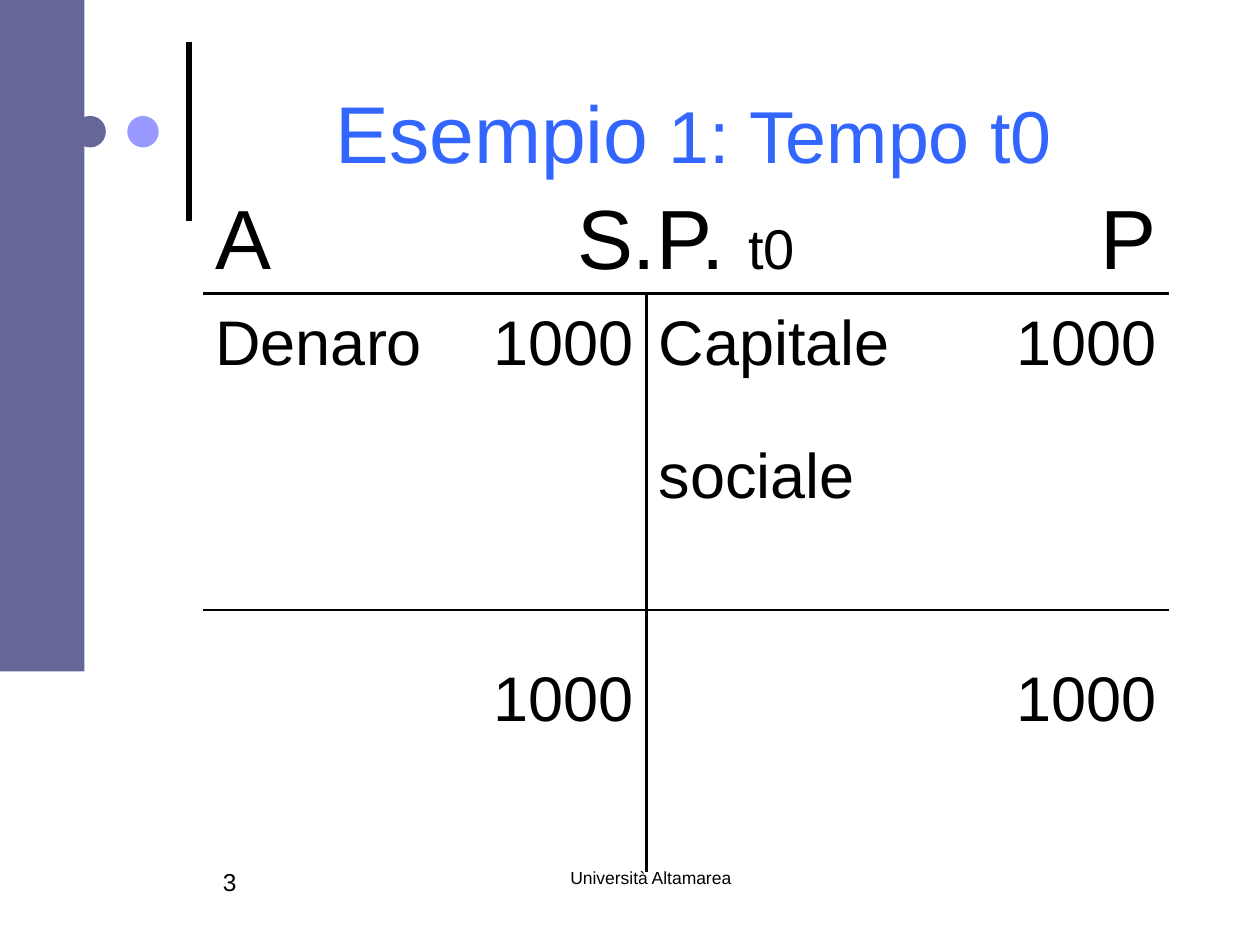
import pptx
import pptx.dml.color
import pptx.enum.shapes
import pptx.enum.text
import pptx.oxml.ns
import pptx.util
from lxml import etree

Inches = pptx.util.Inches
Pt = pptx.util.Pt
RGBColor = pptx.dml.color.RGBColor
ALIGN = pptx.enum.text.PP_ALIGN
ANCHOR = pptx.enum.text.MSO_ANCHOR
SHAPE = pptx.enum.shapes.MSO_SHAPE
qn = pptx.oxml.ns.qn

BLACK = RGBColor(0x00, 0x00, 0x00)
SLATE = RGBColor(0x66, 0x66, 0x99)
LAVENDER = RGBColor(0x99, 0x99, 0xFF)
BLUE = RGBColor(0x33, 0x66, 0xFF)
FONT = "Arial"

COLUMN_WIDTHS = [1.92, 1.6, 2.23, 1.92]
ROW_HEIGHTS = [0.94, 0.73, 1.05, 0.73, 1.04, 1.04]
HEADER_RULE_ROW = 0
TOTAL_RULE_ROW = 3
CENTRE_COLUMN = 2
ENTRIES = {
    (0, 0): ([("A", 48)], ALIGN.LEFT),
    (0, 1): ([("S.P. ", 48), ("t0", 32)], ALIGN.CENTER),
    (0, 3): ([("P", 48)], ALIGN.RIGHT),
    (1, 0): ([("Denaro", 36)], ALIGN.LEFT),
    (1, 1): ([("1000", 36)], ALIGN.RIGHT),
    (1, 2): ([("Capitale", 36)], ALIGN.LEFT),
    (1, 3): ([("1000", 36)], ALIGN.RIGHT),
    (2, 2): ([("sociale", 36)], ALIGN.LEFT),
    (4, 1): ([("1000", 36)], ALIGN.RIGHT),
    (4, 3): ([("1000", 36)], ALIGN.RIGHT),
}


def add_runs(para, runs, color, align):
    para.alignment = align
    for text, size in runs:
        run = para.add_run()
        run.text = text
        run.font.name = FONT
        run.font.size = Pt(size)
        run.font.color.rgb = color


def add_text(page, bounds, runs, color=BLACK, align=ALIGN.LEFT, anchor=ANCHOR.TOP):
    box = page.shapes.add_textbox(*map(Inches, bounds))
    box.text_frame.word_wrap = True
    box.text_frame.vertical_anchor = anchor
    add_runs(box.text_frame.paragraphs[0], runs, color, align)


def add_filled_shape(page, kind, bounds, color):
    shape = page.shapes.add_shape(kind, *map(Inches, bounds))
    shape.shadow.inherit = False
    shape.fill.solid()
    shape.fill.fore_color.rgb = color
    shape.line.fill.background()


def add_rule(page, start, end, width):
    rule = page.shapes.add_connector(
        pptx.enum.shapes.MSO_CONNECTOR.STRAIGHT, *map(Inches, start + end))
    rule.line.color.rgb = BLACK
    rule.line.width = Pt(width)
    etree.SubElement(rule._element.spPr, qn("a:effectLst"))


def set_borders(cell, widths):
    properties = cell._tc.get_or_add_tcPr()
    for position, (side, width) in enumerate(widths.items()):
        border = etree.Element(qn(f"a:ln{side}"), w=str(Pt(width)))
        if width:
            fill = etree.SubElement(border, qn("a:solidFill"))
            etree.SubElement(fill, qn("a:srgbClr"), val=str(BLACK))
        else:
            etree.SubElement(border, qn("a:noFill"))
        properties.insert(position, border)


def border_widths(row, column):
    rules = {HEADER_RULE_ROW: 2, TOTAL_RULE_ROW: 1}
    below_header = row > HEADER_RULE_ROW
    return {
        "L": 2 if below_header and column == CENTRE_COLUMN else 0,
        "R": 2 if below_header and column == CENTRE_COLUMN - 1 else 0,
        "T": rules.get(row - 1, 0),
        "B": rules.get(row, 0),
    }


def add_balance_table(page, left, top):
    table = page.shapes.add_table(
        len(ROW_HEIGHTS), len(COLUMN_WIDTHS), Inches(left), Inches(top),
        Inches(sum(COLUMN_WIDTHS)), Inches(sum(ROW_HEIGHTS))).table
    table.first_row = False
    table.horz_banding = False
    for column, width in zip(table.columns, COLUMN_WIDTHS):
        column.width = Inches(width)
    for row, height in zip(table.rows, ROW_HEIGHTS):
        row.height = Inches(height)
    table.cell(0, 1).merge(table.cell(0, 2))
    for row in range(len(ROW_HEIGHTS)):
        for column in range(len(COLUMN_WIDTHS)):
            cell = table.cell(row, column)
            cell.fill.background()
            cell.vertical_anchor = ANCHOR.BOTTOM
            set_borders(cell, border_widths(row, column))
            if (row, column) in ENTRIES:
                runs, align = ENTRIES[row, column]
                add_runs(cell.text_frame.paragraphs[0], runs, BLACK, align)


def main():
    deck = pptx.Presentation()
    deck.slide_width = Inches(10)
    deck.slide_height = Inches(7.5)
    page = deck.slides.add_slide(deck.slide_layouts[6])

    add_rule(page, (1.5, 1.75), (1.5, 0.33), 3)
    add_filled_shape(page, SHAPE.OVAL, (0.59, 0.92, 0.25, 0.25), SLATE)
    add_filled_shape(page, SHAPE.OVAL, (1.01, 0.92, 0.25, 0.25), LAVENDER)
    add_filled_shape(page, SHAPE.RECTANGLE, (0, 0, 0.67, 5.33), SLATE)
    add_text(page, (3.58, 6.83, 3.17, 0.5), [("Università Altamarea", 10)],
             align=ALIGN.CENTER)
    add_text(page, (1.67, 6.83, 1.42, 0.5), [("3", 14)])
    add_text(page, (1.67, 0.21, 7.67, 1.67), [("Esempio", 46), (" 1: Tempo t0", 42)],
             BLUE, ALIGN.CENTER, ANCHOR.MIDDLE)
    add_balance_table(page, 1.61, 1.39)

    deck.save("out.pptx")


if __name__ == "__main__":
    main()
